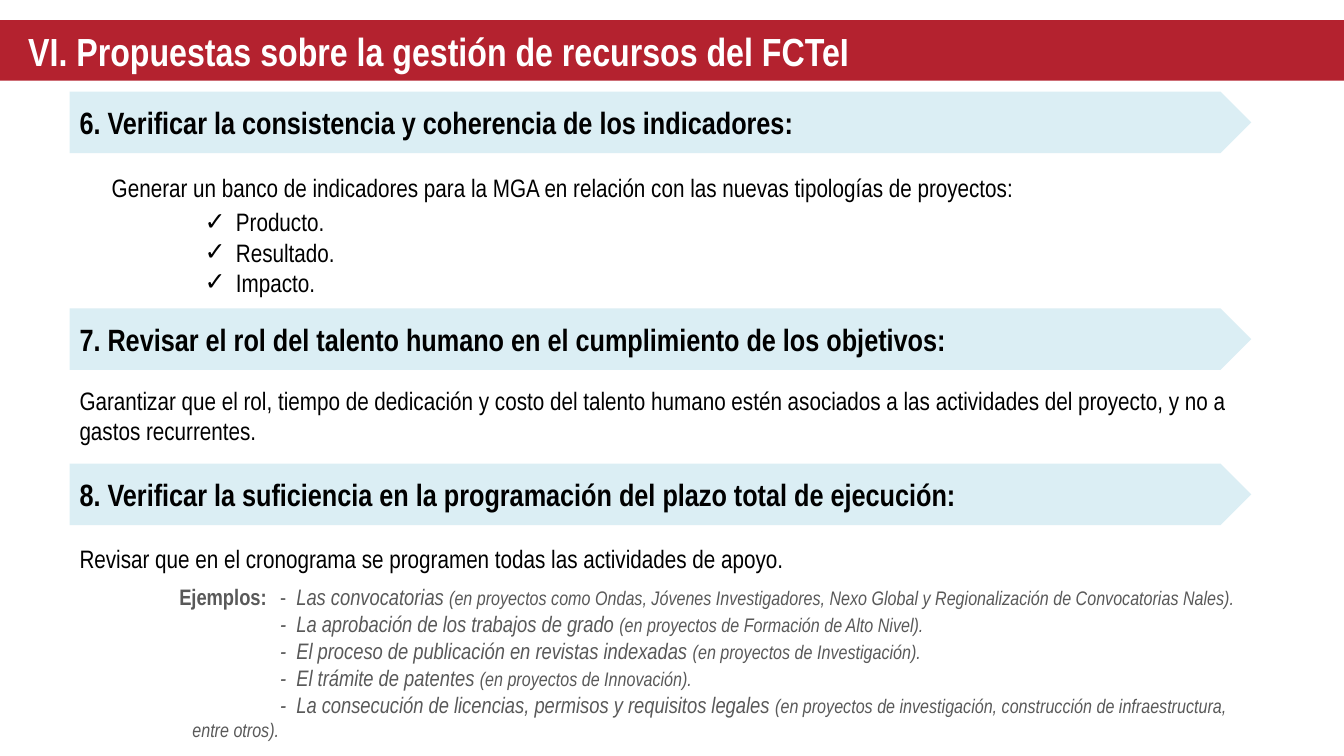
"""Build the slide on proposals for managing FCTeI resources."""
from lxml import etree
from pptx import Presentation
from pptx.dml.color import RGBColor
from pptx.enum.shapes import MSO_SHAPE as Shape
from pptx.enum.text import MSO_ANCHOR as Anchor, MSO_AUTO_SIZE as AutoSize, PP_ALIGN as Align
from pptx.oxml.ns import qn
from pptx.util import Inches, Pt

RED = RGBColor(0xB4, 0x22, 0x2F)
PALE_BLUE = RGBColor(0xDB, 0xEE, 0xF4)
WHITE = RGBColor(0xFF, 0xFF, 0xFF)
BLACK = RGBColor(0, 0, 0)
GREY = RGBColor(0x59, 0x59, 0x59)
LEFT, WIDTH = 0.69, 11.72


def add_run(paragraph, text, size, color=BLACK, bold=False, italic=False):
    run = paragraph.add_run()
    run.text = text
    font = run.font
    font.name, font.size, font.bold, font.italic = "Arial Narrow", Pt(size), bold, italic
    font.color.rgb = color


def place(shape, left, top, width, height, anchor=Anchor.TOP):
    shape.left, shape.top = Inches(left), Inches(top)
    shape.width, shape.height = Inches(width), Inches(height)
    frame = shape.text_frame
    frame.word_wrap = True
    frame.auto_size = AutoSize.NONE
    frame.vertical_anchor = anchor
    frame.paragraphs[0].alignment = Align.LEFT
    return frame


presentation = Presentation()
presentation.slide_width, presentation.slide_height = Inches(13.33), Inches(7.5)
slide = presentation.slides.add_slide(presentation.slide_layouts[1])
title, checklist = slide.placeholders

title.fill.solid()
title.fill.fore_color.rgb = RED
frame = place(title, 0, 0.2, 13.33, 0.6, Anchor.MIDDLE)
frame.margin_left = Inches(0.28)
add_run(frame.paragraphs[0], "VI. Propuestas sobre la gestión de recursos del FCTeI", 28, WHITE, True)

headings = [
    (0.91, "6. Verificar la consistencia y coherencia de los indicadores:"),
    (3.06, "7. Revisar el rol del talento humano en el cumplimiento de los objetivos:"),
    (4.6, "8. Verificar la suficiencia en la programación del plazo total de ejecución:"),
]
for top, text in headings:
    arrow = slide.shapes.add_shape(Shape.PENTAGON, 0, 0, 0, 0)
    arrow.shadow.inherit = False
    arrow.fill.solid()
    arrow.fill.fore_color.rgb = PALE_BLUE
    arrow.line.fill.background()
    frame = place(arrow, LEFT, top, WIDTH, 0.61, Anchor.MIDDLE)
    add_run(frame.paragraphs[0], text, 22, bold=True)

explanations = [
    (1.01, 1.66, 9.55, 0.4, "Generar un banco de indicadores para la MGA en relación con las nuevas "
     "tipologías de proyectos:"),
    (LEFT, 3.77, WIDTH, 0.71, "Garantizar que el rol, tiempo de dedicación y costo del talento humano estén "
     "asociados a las actividades del proyecto, y no a gastos recurrentes."),
    (LEFT, 5.34, 9.55, 0.4, "Revisar que en el cronograma se programen todas las actividades de apoyo."),
]
for left, top, width, height, text in explanations:
    frame = place(slide.shapes.add_textbox(0, 0, 0, 0), left, top, width, height)
    add_run(frame.paragraphs[0], text, 18)

frame = place(checklist, 1.93, 2, 5.27, 1.01)
for index, text in enumerate(["Producto.", "Resultado.", "Impacto."]):
    paragraph = frame.add_paragraph() if index else frame.paragraphs[0]
    paragraph.space_before = Pt(0)
    add_run(paragraph, text, 18)
    properties = paragraph._p.get_or_add_pPr()
    properties.set("marL", str(Inches(0.31)))
    properties.set("indent", str(-Inches(0.31)))
    etree.SubElement(properties, qn("a:buChar")).set("char", "✓")

examples = [
    ("Las convocatorias ", "(en proyectos como Ondas, Jóvenes Investigadores, Nexo Global y "
     "Regionalización de Convocatorias Nales).", 1, -1),
    ("La aprobación de los trabajos de grado ", "(en proyectos de Formación de Alto Nivel).", 1, 0),
    ("El proceso de publicación en revistas indexadas ", "(en proyectos de Investigación).", 1, 0),
    ("El trámite de patentes ", "(en proyectos de Innovación).", 1, 0),
    ("La consecución de licencias, permisos y requisitos legales ",
     "(en proyectos de investigación, construcción de infraestructura, entre otros).", 0.13, 0.87),
]
examples_box = slide.shapes.add_textbox(0, 0, 0, 0)
examples_box.fill.solid()
examples_box.fill.fore_color.rgb = WHITE
frame = place(examples_box, 1.68, 5.74, 11.04, 1.68)
frame.margin_right = Inches(0.35)
for index, (activity, projects, margin, indent) in enumerate(examples):
    paragraph = frame.add_paragraph() if index else frame.paragraphs[0]
    properties = paragraph._p.get_or_add_pPr()
    properties.set("marL", str(Inches(margin)))
    properties.set("indent", str(Inches(indent)))
    if index == 0:
        add_run(paragraph, "Ejemplos:\t", 16, GREY, bold=True)
    add_run(paragraph, "-  ", 16, GREY, italic=index > 0)
    add_run(paragraph, activity, 16, GREY, italic=True)
    add_run(paragraph, projects, 14, GREY, italic=True)

presentation.save("out.pptx")
